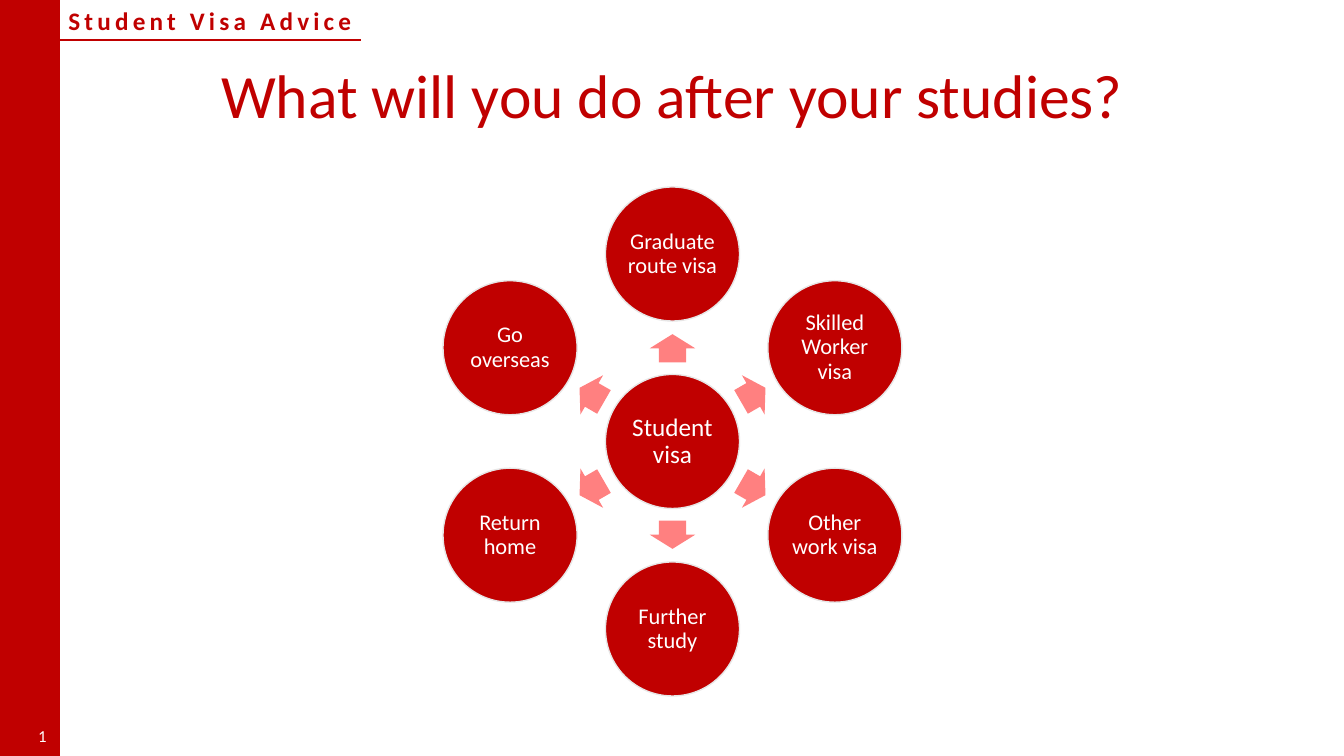
from math import cos, radians, sin
from lxml.etree import SubElement
from pptx import Presentation
from pptx.dml.color import RGBColor
from pptx.enum.shapes import MSO_CONNECTOR, MSO_SHAPE
from pptx.enum.text import MSO_ANCHOR, PP_ALIGN
from pptx.oxml.ns import qn
from pptx.util import Inches, Pt

RED, PINK, GREY, WHITE = "C00000", "FF8080", "E7E6E6", "FFFFFF"


def paint(part, color):
    if hasattr(part, "solid"):
        part.solid()
        part.fore_color.rgb = RGBColor.from_string(color)
    else:
        part.color.rgb = RGBColor.from_string(color)


def write(shape, text, size, color, align, anchor=MSO_ANCHOR.MIDDLE):
    frame = shape.text_frame
    frame.word_wrap = True
    frame.vertical_anchor = anchor
    frame.text = text
    para = frame.paragraphs[0]
    para.alignment = align
    font = para.runs[0].font
    font.name = "Calibri"
    font.size = Pt(size)
    paint(font, color)
    return para


deck = Presentation()
deck.slide_width, deck.slide_height = Inches(13.33), Inches(7.5)
slide = deck.slides.add_slide(deck.slide_layouts[6])
shapes = slide.shapes

band = shapes.add_shape(MSO_SHAPE.RECTANGLE, Inches(-0.01), 0, Inches(0.6), Inches(7.5))
band.shadow.inherit = False
paint(band.fill, RED)
paint(band.line, RED)
band.line.width = Pt(1)

topic = shapes.add_textbox(Inches(0.58), 0, Inches(3.51), Inches(0.4))
para = write(topic, "Student Visa Advice", 18, RED, PP_ALIGN.LEFT, MSO_ANCHOR.TOP)
para.runs[0].font.bold = True
para.runs[0].font._element.set("spc", "300")

rule = shapes.add_connector(
    MSO_CONNECTOR.STRAIGHT, Inches(0.49), Inches(0.4), Inches(3.58), Inches(0.4))
paint(rule.line, RED)
rule.line.width = Pt(1.5)
SubElement(rule._element.spPr, qn("a:effectLst"))

title = shapes.add_textbox(Inches(0.92), Inches(0.25), Inches(11.5), Inches(1.45))
para = write(title, "What will you do after your studies?", 44, RED, PP_ALIGN.CENTER)
para.line_spacing = 0.9

mid_x, mid_y = 6.67, 4.38
ring, reach = 1.86, 0.925
disc, long, wide = 1.33, 0.28, 0.45
choices = ["Graduate route visa", "Skilled Worker visa", "Other work visa",
           "Further study", "Return home", "Go overseas"]

nodes = [("Student visa", 18, mid_x, mid_y)]
for i, choice in enumerate(choices):
    angle = 60 * i - 90
    dx, dy = cos(radians(angle)), sin(radians(angle))
    nodes.append((choice, 16, mid_x + ring * dx, mid_y + ring * dy))
    arrow = shapes.add_shape(
        MSO_SHAPE.RIGHT_ARROW,
        Inches(mid_x + reach * dx - long / 2), Inches(mid_y + reach * dy - wide / 2),
        Inches(long), Inches(wide))
    arrow.adjustments[0] = 0.6
    arrow.adjustments[1] = 0.5
    arrow.rotation = angle % 360
    arrow.shadow.inherit = False
    paint(arrow.fill, PINK)
    arrow.line.fill.background()

for text, size, x, y in nodes:
    node = shapes.add_shape(
        MSO_SHAPE.OVAL, Inches(x - disc / 2), Inches(y - disc / 2),
        Inches(disc), Inches(disc))
    node.shadow.inherit = False
    paint(node.fill, RED)
    paint(node.line, GREY)
    node.line.width = Pt(1)
    frame = node.text_frame
    frame.margin_left = frame.margin_right = Inches(0.02)
    frame.margin_top = frame.margin_bottom = Inches(0.02)
    para = write(node, text, size, WHITE, PP_ALIGN.CENTER)
    para.line_spacing = 0.9

page = shapes.add_textbox(Inches(-0.01), Inches(7.1), Inches(0.57), Inches(0.4))
write(page, "1", 12, WHITE, PP_ALIGN.RIGHT)

deck.save("out.pptx")
